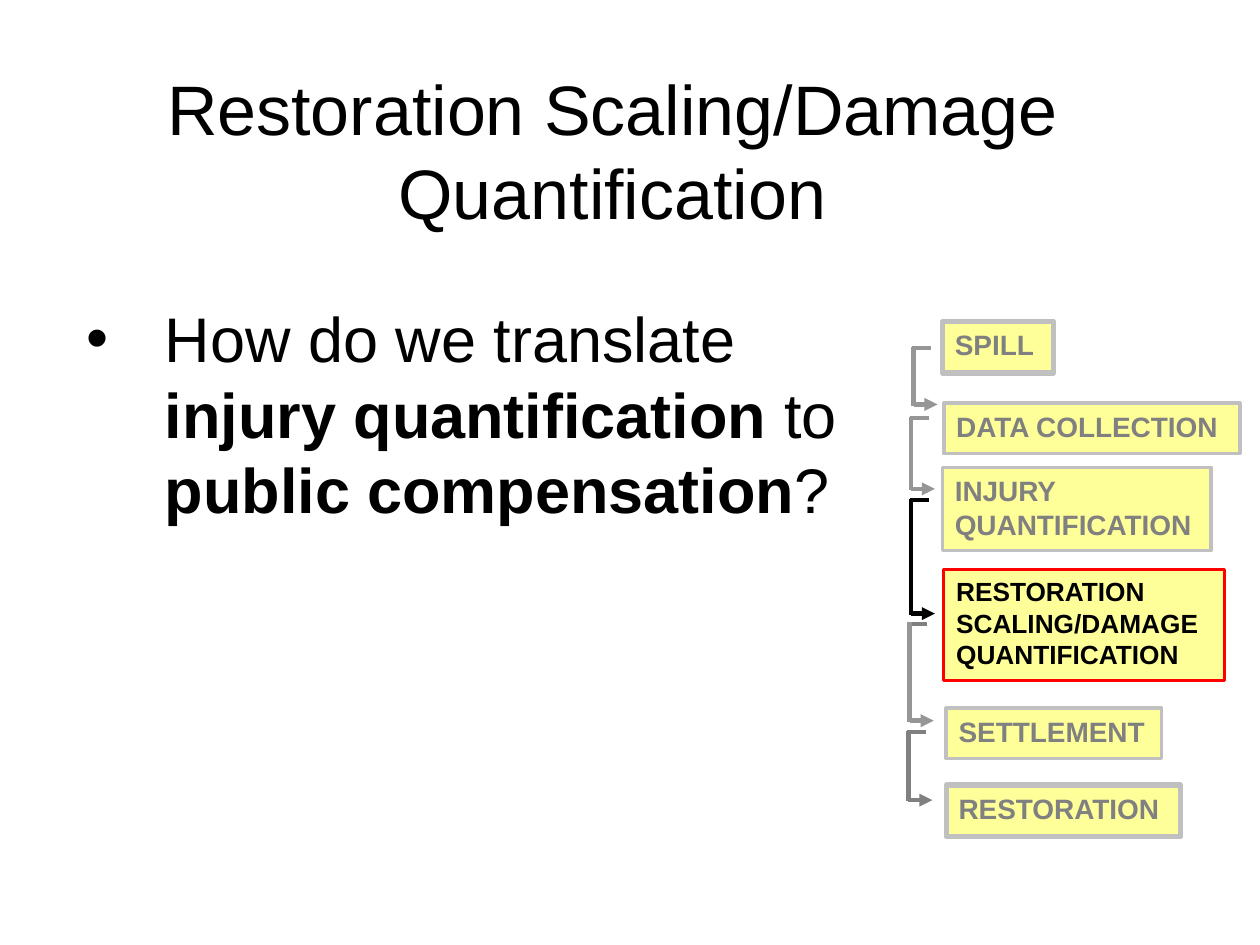
from lxml.etree import SubElement
from pptx import Presentation
from pptx.dml.color import RGBColor as RGB
from pptx.enum.shapes import MSO_CONNECTOR as Connector, MSO_SHAPE as Shape
from pptx.enum.text import MSO_ANCHOR as Anchor, PP_ALIGN as Align
from pptx.oxml.ns import qn
from pptx.util import Inches, Pt

THEME = {
    "font": "Arial",
    "title": Pt(40), "body": Pt(36), "step": Pt(16), "current": Pt(15),
    "black": RGB.from_string("000000"), "gray": RGB.from_string("808080"),
    "arrow": RGB.from_string("969696"), "silver": RGB.from_string("C0C0C0"),
    "red": RGB.from_string("FF0000"), "yellow": RGB.from_string("FFFF99"),
}


def format_font(font, size, color, bold=False):
    values = {"name": THEME["font"], "size": THEME[size], "bold": bold}
    for key, value in values.items():
        setattr(font, key, value)
    font.color.rgb = THEME[color]


def draw_line(slide, start, end, color, arrow=False):
    segment = slide.shapes.add_connector(
        Connector.STRAIGHT, *(Inches(v) for v in start + end))
    segment.line.width = Pt(2.5)
    segment.line.color.rgb = THEME[color]
    if arrow:
        SubElement(segment.line._get_or_add_ln(), qn("a:tailEnd"), type="triangle")
    SubElement(segment._element.spPr, qn("a:effectLst"))


deck = Presentation()
deck.slide_width, deck.slide_height = Inches(10), Inches(7.5)
slide = deck.slides.add_slide(deck.slide_layouts[5])

heading = slide.shapes.title
placement = {"left": 0.36, "top": 0.56, "width": 9, "height": 1.25}
for key, value in placement.items():
    setattr(heading, key, Inches(value))
heading.text_frame.text = "Restoration Scaling/Damage Quantification"
heading.text_frame.vertical_anchor = Anchor.MIDDLE
heading.text_frame.paragraphs[0].alignment = Align.CENTER
format_font(heading.text_frame.paragraphs[0].runs[0].font, "title", "black")

steps = [
    (7.48, 2.55, 0.88, 0.41, ["SPILL"], 3),
    (7.49, 3.2, 2.35, 0.4, ["DATA COLLECTION"], 2),
    (7.48, 3.71, 2.13, 0.66, ["INJURY", "QUANTIFICATION"], 2),
    (7.49, 4.52, 2.23, 0.88, ["RESTORATION", "SCALING/DAMAGE", "QUANTIFICATION"], 2),
    (7.51, 5.62, 1.71, 0.4, ["SETTLEMENT"], 2),
    (7.51, 6.23, 1.86, 0.41, ["RESTORATION"], 3),
]
for left, top, width, height, lines, border in steps:
    current = "SCALING/DAMAGE" in lines
    step = slide.shapes.add_shape(
        Shape.RECTANGLE, *(Inches(v) for v in (left, top, width, height)))
    step.shadow.inherit = False
    step.fill.solid()
    step.fill.fore_color.rgb = THEME["yellow"]
    step.line.color.rgb = THEME["red" if current else "silver"]
    step.line.width = Pt(border)
    label = step.text_frame
    label.word_wrap = current or lines == ["SPILL"]
    label.vertical_anchor = Anchor.TOP
    label.text = "\n".join(lines)
    for paragraph in label.paragraphs:
        paragraph.alignment = Align.LEFT
        format_font(paragraph.runs[0].font, "current" if current else "step",
                    "black" if current else "gray", True)

links = [
    (7.25, 2.76, 3.21, "arrow", "arrow"),
    (7.23, 3.32, 3.88, "arrow", "arrow"),
    (7.23, 3.97, 4.87, "black", "black"),
    (7.22, 4.95, 5.72, "gray", "arrow"),
    (7.21, 5.81, 6.35, "gray", "gray"),
]
for spine, top, bottom, stub_color, color in links:
    draw_line(slide, (spine + 0.14, top), (spine - 0.01, top), stub_color)
    draw_line(slide, (spine, top - 0.01), (spine, bottom + 0.01), color)
    draw_line(slide, (spine, bottom), (spine + 0.19, bottom), color, arrow=True)

question = slide.shapes.add_textbox(
    *(Inches(v) for v in (0.59, 2.33, 6.3, 1.92))).text_frame
question.word_wrap = True
paragraph = question.paragraphs[0]
bullet = paragraph._p.get_or_add_pPr()
for key, value in {"marL": Inches(0.62), "indent": -Inches(0.62)}.items():
    bullet.set(key, str(value))
SubElement(bullet, qn("a:buFont"), typeface=THEME["font"])
SubElement(bullet, qn("a:buChar"), char="•")
phrases = [
    ("How do we translate ", False),
    ("injury quantification ", True),
    ("to ", False),
    ("public compensation", True),
    ("?", False),
]
for phrase, bold in phrases:
    run = paragraph.add_run()
    run.text = phrase
    format_font(run.font, "body", "black", bold)

deck.save("out.pptx")
